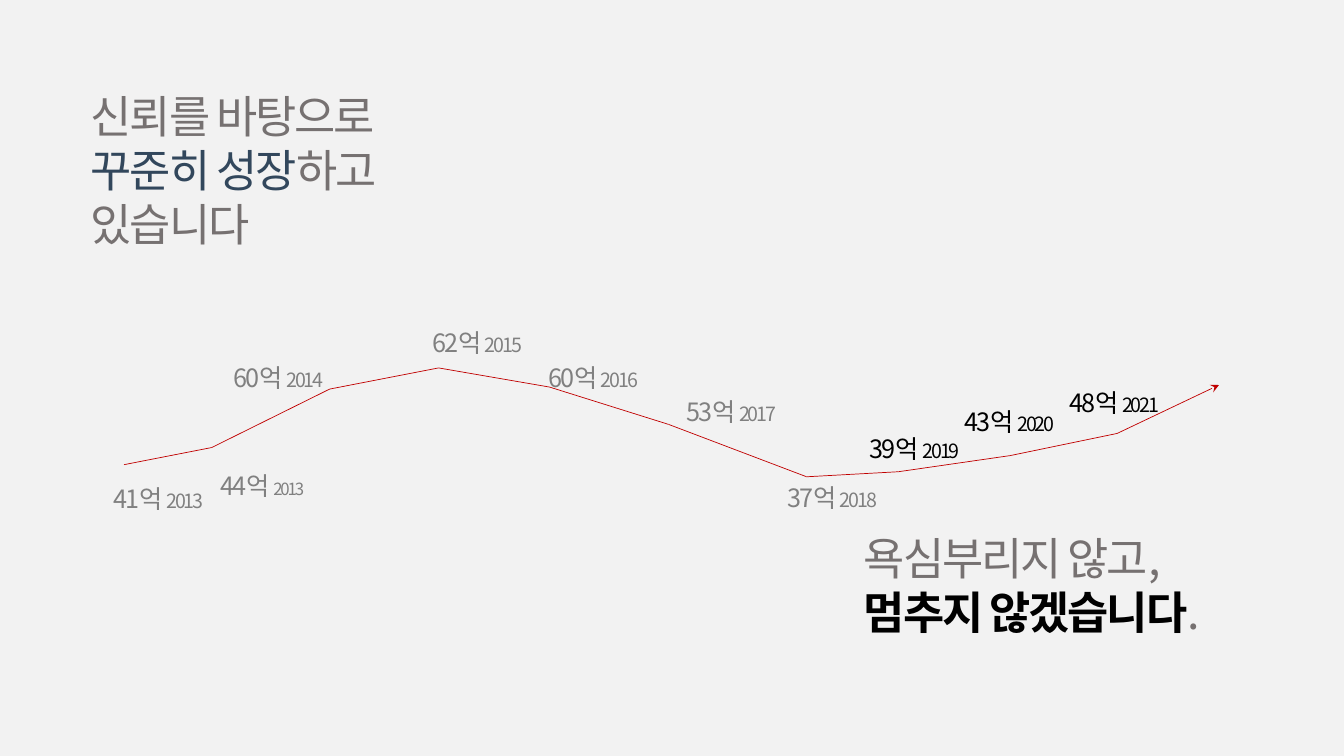
from dataclasses import dataclass
from itertools import pairwise

from pptx import Presentation
from pptx.dml.color import RGBColor
from pptx.enum.shapes import MSO_CONNECTOR
from pptx.enum.text import MSO_ANCHOR, MSO_AUTO_SIZE, PP_ALIGN
from pptx.oxml.ns import qn
from pptx.util import Inches, Pt
from lxml.etree import SubElement


@dataclass(frozen=True)
class Theme:
    font: str = "Noto Sans CJK KR"
    background: str = "F2F2F2"
    message: str = "767171"
    accent: str = "32475C"
    past: str = "808080"
    recent: str = "000000"
    trend: str = "C00000"
    message_size: int = 32
    amount_size: int = 18
    year_size: int = 14
    small_year_size: int = 12
    tracking: float = -1.5
    trend_width: float = 0.5


@dataclass(frozen=True)
class Run:
    text: str
    size: int
    color: str
    bold: bool = False


@dataclass(frozen=True)
class Revenue:
    amount: str
    year: str
    col: float
    row: float
    cols: float
    color: str = Theme.past
    year_size: int = Theme.year_size
    wrap: bool = False


THEME = Theme()
CELL = Inches(0.1)  # the slide is 133.33 columns by 75 rows
LABEL_ROWS = 4
MESSAGE_ROWS = 11.8

REVENUES = [
    Revenue("41억", "2013", 10.3, 47.5, 11.4),
    Revenue("44억", "2013", 20.9, 46.2, 10.9, year_size=THEME.small_year_size, wrap=True),
    Revenue("60억", "2014", 22.2, 35.5, 12.7, wrap=True),
    Revenue("62억", "2015", 41.9, 32, 11.4),
    Revenue("60억", "2016", 53.4, 35.5, 11.4),
    Revenue("53억", "2017", 67.1, 38.8, 11.4),
    Revenue("37억", "2018", 77.1, 47.4, 12.8, wrap=True),
    Revenue("39억", "2019", 85.3, 42.5, 11.9, THEME.recent),
    Revenue("43억", "2020", 94.7, 39.8, 11.9, THEME.recent),
    Revenue("48억", "2021", 105.1, 37.9, 11.9, THEME.recent),
]
TREND = [
    (12.3, 46.1), (21, 44.4), (32.7, 38.6), (43.5, 36.5), (54.5, 38.4), (66.3, 42.1),
    (80, 47.3), (89.1, 46.8), (100.2, 45.2), (110.8, 43), (120.9, 38.2),
]


def cells(count: float) -> int:
    return round(count * CELL)


def write(shape, paragraphs: list[list[Run]], *, wrap: bool = False) -> None:
    """Fill a shape with left-aligned, tightly tracked paragraphs."""
    frame = shape.text_frame
    frame.word_wrap = wrap
    frame.auto_size = MSO_AUTO_SIZE.SHAPE_TO_FIT_TEXT
    frame.vertical_anchor = MSO_ANCHOR.TOP
    for index, runs in enumerate(paragraphs):
        paragraph = frame.add_paragraph() if index else frame.paragraphs[0]
        paragraph.alignment = PP_ALIGN.LEFT
        paragraph.space_before = Pt(0)
        for part in runs:
            run = paragraph.add_run()
            run.text = part.text
            run.font.size = Pt(part.size)
            run.font.bold = part.bold
            run.font.name = THEME.font
            run.font.color.rgb = RGBColor.from_string(part.color)
            properties = run.font._element
            properties.set("spc", str(round(THEME.tracking * 100)))
            SubElement(properties, qn("a:ea")).set("typeface", THEME.font)


def place(shape, col: float, row: float, cols: float, rows: float) -> None:
    shape.left, shape.top = cells(col), cells(row)
    shape.width, shape.height = cells(cols), cells(rows)


def message_run(text: str, color: str = THEME.message, bold: bool = False) -> Run:
    return Run(text, THEME.message_size, color, bold)


def draw_segment(slide, start: tuple, end: tuple, arrow: bool) -> None:
    segment = slide.shapes.add_connector(
        MSO_CONNECTOR.STRAIGHT, *map(cells, start), *map(cells, end))
    segment.line.color.rgb = RGBColor.from_string(THEME.trend)
    segment.line.width = Pt(THEME.trend_width)
    if arrow:
        SubElement(segment.line._get_or_add_ln(), qn("a:tailEnd")).set("type", "stealth")
    SubElement(segment._element.spPr, qn("a:effectLst"))


def draw_revenue(slide, revenue: Revenue) -> None:
    label = slide.shapes.add_textbox(0, 0, 0, 0)
    place(label, revenue.col, revenue.row, revenue.cols, LABEL_ROWS)
    write(label, [[
        Run(f"{revenue.amount} ", THEME.amount_size, revenue.color),
        Run(revenue.year, revenue.year_size, revenue.color),
    ]], wrap=revenue.wrap)


def main() -> None:
    deck = Presentation()
    deck.slide_width, deck.slide_height = Inches(13.33), Inches(7.5)
    slide = deck.slides.add_slide(deck.slide_layouts[5])
    slide.background.fill.solid()
    slide.background.fill.fore_color.rgb = RGBColor.from_string(THEME.background)

    # Opening message
    title = slide.shapes.title
    place(title, 8, 8.3, 46.7, MESSAGE_ROWS)
    write(title, [
        [message_run("신뢰를 바탕으로")],
        [message_run("꾸준히 성장", THEME.accent), message_run("하고 있습니다")],
    ])

    # Revenue trend, ending in an arrow
    segments = list(pairwise(TREND))
    for start, end in segments:
        draw_segment(slide, start, end, arrow=end == TREND[-1])
    for revenue in REVENUES:
        draw_revenue(slide, revenue)

    # Closing message
    closing = slide.shapes.add_textbox(0, 0, 0, 0)
    place(closing, 84.7, 52.2, 38.6, MESSAGE_ROWS)
    write(closing, [
        [message_run("욕심부리지 않고,")],
        [message_run("멈추지 않겠습니다", THEME.recent, bold=True), message_run(".")],
    ])

    deck.save("out.pptx")


if __name__ == "__main__":
    main()
